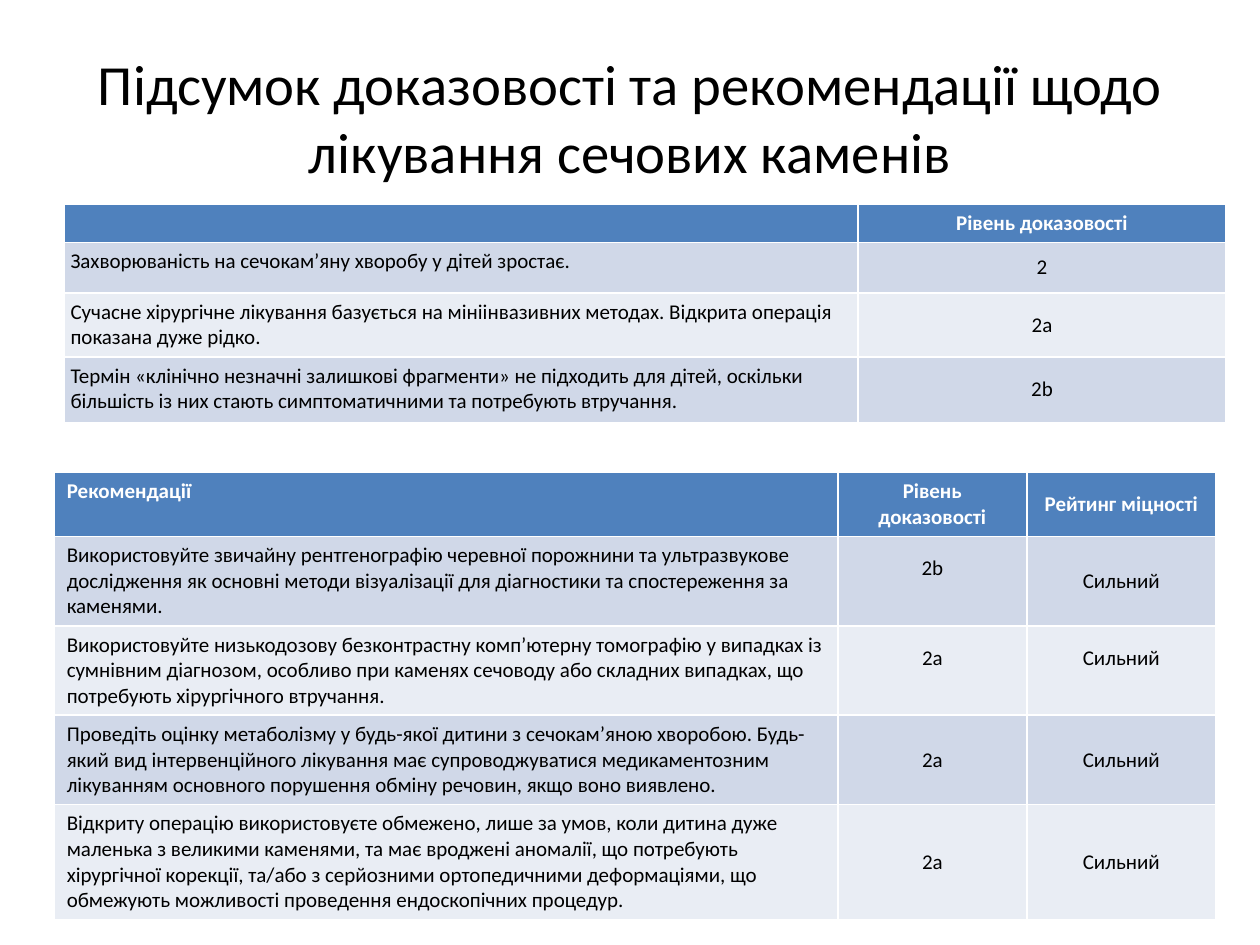
from lxml import etree
from pptx import Presentation
from pptx import util as u
from pptx.dml.color import RGBColor
from pptx.enum import text
from pptx.oxml import ns

BLACK = RGBColor(0x00, 0x00, 0x00)
WHITE = RGBColor(0xFF, 0xFF, 0xFF)
HEADER_BLUE = RGBColor(0x4F, 0x81, 0xBD)
BANDS = (RGBColor(0xD0, 0xD8, 0xE8), RGBColor(0xE9, 0xED, 0xF4))
FONT = "Calibri"
TABLE_SIZE = 12
TIGHT_INSET = 0.05
RAISED_INSET = 0.25

TITLE = "Підсумок доказовості та рекомендації щодо лікування сечових каменів"
EVIDENCE = [
    ("", "Рівень доказовості"),
    ("Захворюваність на сечокам’яну хворобу у дітей зростає.", "2"),
    ("Сучасне хірургічне лікування базується на мініінвазивних методах. "
     "Відкрита операція показана дуже рідко.", "2a"),
    ("Термін «клінічно незначні залишкові фрагменти» не підходить для дітей, "
     "оскільки більшість із них стають симптоматичними та потребують втручання.", "2b"),
]
RECOMMENDATIONS = [
    ("Рекомендації", "Рівень доказовості", "Рейтинг міцності"),
    ("Використовуйте звичайну рентгенографію черевної порожнини та ультразвукове "
     "дослідження як основні методи візуалізації для діагностики та спостереження "
     "за каменями.", "2b", "Сильний"),
    ("Використовуйте низькодозову безконтрастну комп’ютерну томографію у випадках "
     "із сумнівним діагнозом, особливо при каменях сечоводу або складних випадках, "
     "що потребують хірургічного втручання.", "2a", "Сильний"),
    ("Проведіть оцінку метаболізму у будь-якої дитини з сечокам’яною хворобою. "
     "Будь-який вид інтервенційного лікування має супроводжуватися медикаментозним "
     "лікуванням основного порушення обміну речовин, якщо воно виявлено.",
     "2a", "Сильний"),
    ("Відкриту операцію використовуєте обмежено, лише за умов, коли дитина дуже "
     "маленька з великими каменями, та має вроджені аномалії, що потребують "
     "хірургічної корекції, та/або з серйозними ортопедичними деформаціями, що "
     "обмежують можливості проведення ендоскопічних процедур.", "2a", "Сильний"),
]
RAISED_RATINGS = ((1, 1), (2, 1), (2, 2))


def format_runs(paragraph, size, color, bold=False):
    """Apply the slide font to every run of a paragraph."""
    for run in paragraph.runs:
        run.font.name = FONT
        run.font.size = u.Pt(size)
        run.font.bold = bold
        run.font.color.rgb = color


def add_title(slide):
    """Fill and place the title placeholder."""
    title = slide.shapes.title
    title.left, title.top = u.Inches(0.5), u.Inches(0.3)
    title.width, title.height = u.Inches(9), u.Inches(1.25)
    title.text_frame.text = TITLE
    title.text_frame.vertical_anchor = text.MSO_ANCHOR.MIDDLE
    heading = title.text_frame.paragraphs[0]
    heading.alignment = text.PP_ALIGN.CENTER
    format_runs(heading, 32.4, BLACK)


def fill_cell(cell, words, row, column):
    """Write one cell: header on blue, statements left, ratings centred."""
    is_header = row == 0
    cell.fill.solid()
    cell.fill.fore_color.rgb = HEADER_BLUE if is_header else BANDS[(row - 1) % 2]
    cell.text_frame.text = words
    paragraph = cell.text_frame.paragraphs[0]
    if column:
        cell.vertical_anchor = text.MSO_ANCHOR.MIDDLE
        paragraph.alignment = text.PP_ALIGN.CENTER
    if words:
        format_runs(paragraph, TABLE_SIZE, WHITE if is_header else BLACK, is_header)
    else:
        etree.SubElement(paragraph._p, ns.qn("a:endParaRPr"), sz=str(TABLE_SIZE * 100))


def add_grid(slide, rows, left, top, height, widths, row_heights):
    """Add a table with given column widths and row heights, in inches."""
    frame = slide.shapes.add_table(
        len(rows), len(widths), u.Inches(left), u.Inches(top),
        u.Inches(sum(widths)), u.Inches(height))
    grid = frame.table
    for column, width in zip(grid.columns, widths):
        column.width = u.Inches(width)
    for row, row_height in zip(grid.rows, row_heights):
        row.height = u.Inches(row_height)
    for r, words_in_row in enumerate(rows):
        for c, words in enumerate(words_in_row):
            fill_cell(grid.cell(r, c), words, r, c)
    frame.height = u.Inches(height)
    return grid


def main():
    """Build the slide with its title and two tables."""
    deck = Presentation()
    deck.slide_width, deck.slide_height = u.Inches(10), u.Inches(7.5)
    slide = deck.slides.add_slide(deck.slide_layouts[5])
    add_title(slide)

    evidence = add_grid(slide, EVIDENCE, 0.51, 1.62, 1.73,
                        (6.3, 2.92), (0.21, 0.4, 0.51, 0.52))
    for cell in evidence.iter_cells():
        cell.margin_left = cell.margin_right = u.Inches(TIGHT_INSET)
        cell.margin_top = cell.margin_bottom = u.Inches(TIGHT_INSET)

    advice = add_grid(slide, RECOMMENDATIONS, 0.43, 3.75, 3.5,
                      (6.22, 1.5, 1.5), [0.41] * len(RECOMMENDATIONS))
    for row, column in RAISED_RATINGS:
        advice.cell(row, column).margin_bottom = u.Inches(RAISED_INSET)

    deck.save("out.pptx")


if __name__ == "__main__":
    main()
